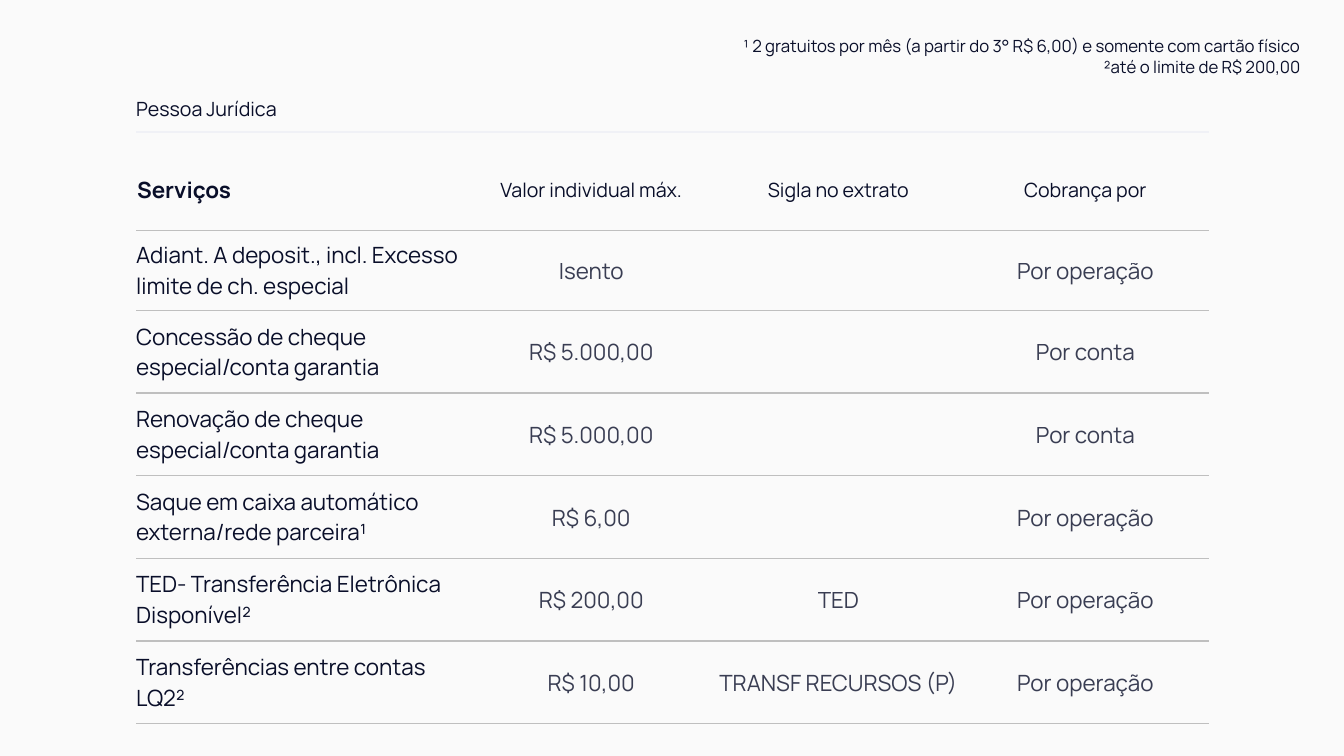
"""Build the business-account service fee table slide."""
from pptx import Presentation
from pptx.dml.color import RGBColor
from pptx.enum.shapes import MSO_CONNECTOR
from pptx.enum.text import MSO_ANCHOR, PP_ALIGN
from pptx.oxml.ns import qn
from pptx.util import Inches, Pt
from lxml import etree

STRAIGHT = MSO_CONNECTOR.STRAIGHT
MIDDLE = MSO_ANCHOR.MIDDLE
LEFT, CENTER, RIGHT = PP_ALIGN.LEFT, PP_ALIGN.CENTER, PP_ALIGN.RIGHT

SECTION = "Pessoa Jurídica"
FOOTNOTES = [
    "¹ 2 gratuitos por mês (a partir do 3° R$ 6,00) e somente com cartão físico",
    "²até o limite de R$ 200,00",
]
HEADER = ("Serviços", "Valor individual máx.", "Sigla no extrato", "Cobrança por")
SERVICES = [
    ("Adiant. A deposit., incl. Excesso limite de ch. especial", "Isento", "", "Por operação"),
    ("Concessão de cheque especial/conta garantia", "R$ 5.000,00", "", "Por conta"),
    ("Renovação de cheque especial/conta garantia", "R$ 5.000,00", "", "Por conta"),
    ("Saque em caixa automático externa/rede parceira¹", "R$ 6,00", "", "Por operação"),
    ("TED- Transferência Eletrônica Disponível²", "R$ 200,00", "TED", "Por operação"),
    ("Transferências entre contas LQ2²", "R$ 10,00", "TRANSF RECURSOS (P)", "Por operação"),
]

THEME = {
    "font": "Manrope",
    "background": "FAFAFA",
    "ink": "090E29",
    "section_rule": "1226AA",
    "row_rule": "BFBFBF",
    "body": 16,
    "label": 14,
    "note": 12,
    "value_alpha": 80,
    "rule_alpha": 30,
}

MARGIN, TABLE_TOP = 1.35, 1.47
COLUMN_WIDTHS = [3.29] + [2.45] * 3
ROW_HEIGHTS = [0.82, 0.79] + [0.82] * 5
TABLE_WIDTH = sum(COLUMN_WIDTHS)


def add_alpha(element, percent):
    for color in element.iter(qn("a:srgbClr")):
        etree.SubElement(color, qn("a:alpha")).set("val", str(percent * 1000))


def write(frame, lines, size, align=LEFT, bold=False):
    for index, line in enumerate(lines):
        paragraph = frame.paragraphs[0] if index == 0 else frame.add_paragraph()
        paragraph.text = line
        paragraph.alignment = align
        font = paragraph.font
        font.name, font.size, font.bold = THEME["font"], Pt(size), bold
        font.color.rgb = RGBColor.from_string(THEME["ink"])


def add_text(slide, box, lines, size, align=LEFT, inset=(0, 0)):
    frame = slide.shapes.add_textbox(*map(Inches, box)).text_frame
    frame.word_wrap = True
    frame.margin_left = frame.margin_right = Inches(inset[0])
    frame.margin_top = frame.margin_bottom = Inches(inset[1])
    write(frame, lines, size, align)


def rule_cell(cell, ruled_sides):
    properties = cell._tc.get_or_add_tcPr()
    for side in ("lnL", "lnR", "lnT", "lnB"):
        border = etree.SubElement(properties, qn(f"a:{side}"), w=str(Pt(1)))
        if side in ruled_sides:
            fill = etree.SubElement(border, qn("a:solidFill"))
            etree.SubElement(fill, qn("a:srgbClr"), val=THEME["row_rule"])
        else:
            etree.SubElement(border, qn("a:noFill"))
    cell.fill.background()


def fill_cell(cell, text, row, column):
    is_header, is_service = row == 0, column == 0
    rule_cell(cell, ("lnB",) if is_header else ("lnT", "lnB"))
    cell.vertical_anchor = MIDDLE
    inset = 0 if is_service and not is_header else 0.01
    cell.margin_left = cell.margin_right = cell.margin_top = Inches(inset)
    cell.margin_bottom = 0
    size = THEME["label"] if is_header and not is_service else THEME["body"]
    align = LEFT if is_service else CENTER
    write(cell.text_frame, [text], size, align, bold=is_header and is_service)
    if not is_header and not is_service:
        add_alpha(cell.text_frame._txBody, THEME["value_alpha"])


def add_fee_table(slide):
    rows = [HEADER] + SERVICES
    box = map(Inches, (MARGIN, TABLE_TOP, TABLE_WIDTH, sum(ROW_HEIGHTS)))
    table = slide.shapes.add_table(len(rows), len(HEADER), *box).table
    table.first_row = table.horz_banding = False
    for column, width in zip(table.columns, COLUMN_WIDTHS):
        column.width = Inches(width)
    for row, height in zip(table.rows, ROW_HEIGHTS):
        row.height = Inches(height)
    for row, texts in enumerate(rows):
        for column, text in enumerate(texts):
            fill_cell(table.cell(row, column), text, row, column)


def add_section_rule(slide, top):
    ends = map(Inches, (MARGIN, top, MARGIN + TABLE_WIDTH, top))
    rule = slide.shapes.add_connector(STRAIGHT, *ends)
    rule.line.width = Pt(0.25)
    rule.line.color.rgb = RGBColor.from_string(THEME["section_rule"])
    properties = rule._element.spPr
    add_alpha(properties, THEME["rule_alpha"])
    etree.SubElement(properties, qn("a:effectLst"))


def main():
    deck = Presentation()
    deck.slide_width, deck.slide_height = Inches(13.33), Inches(7.5)
    slide = deck.slides.add_slide(deck.slide_layouts[6])
    backdrop = slide.background.fill
    backdrop.solid()
    backdrop.fore_color.rgb = RGBColor.from_string(THEME["background"])
    add_fee_table(slide)
    add_text(slide, (MARGIN, 0.96, 4.57, 0.24), [SECTION], THEME["label"])
    add_section_rule(slide, 1.31)
    add_text(slide, (6.67, 0.31, 6.33, 0.5), FOOTNOTES, THEME["note"], RIGHT, (0.1, 0.05))
    deck.save("out.pptx")


if __name__ == "__main__":
    main()
